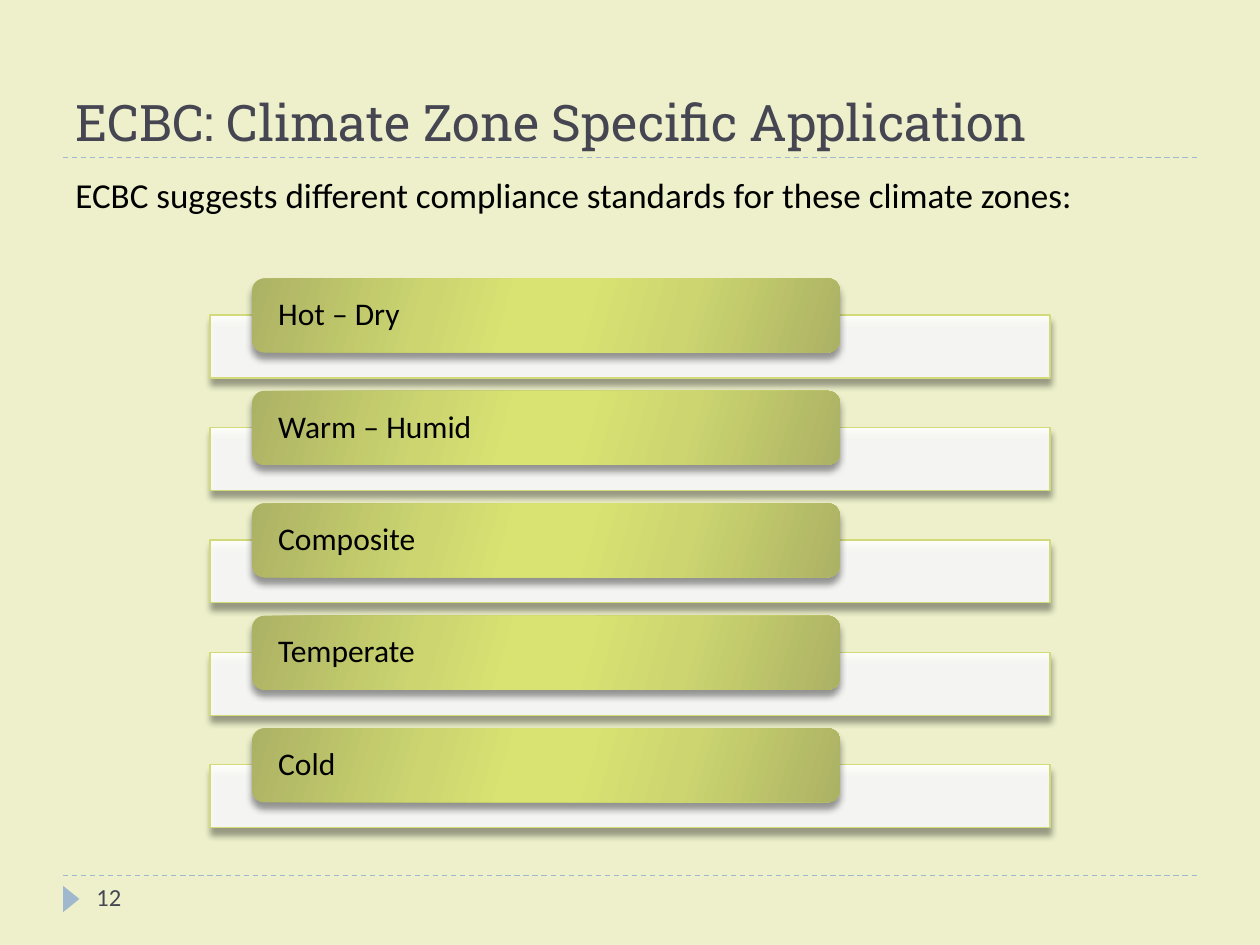
"""Build the climate zone slide: a heading, an introduction and five labelled bars."""
from dataclasses import dataclass

from lxml import etree
from pptx import Presentation
from pptx import util as u
from pptx.dml import color
from pptx.enum import dml, shapes, text
from pptx.oxml import ns

SLIDE_WIDTH, SLIDE_HEIGHT = u.Inches(10), u.Inches(7.5)
COLUMN, ROW = SLIDE_WIDTH / 60, SLIDE_HEIGHT / 60
ZONE_PITCH = 7.14
COLORS = {
    "background": "EDF0CA", "accent": "9FB8CD", "heading": "464653",
    "body": "000000", "bar": "FFFFFF", "bar_edge": "D2DA7A",
    "tab_dark": "ACB264", "tab_mid": "CCD570", "tab_light": "D9E371",
}
TAB_STOPS = [(0, "tab_dark"), (30, "tab_mid"), (45, "tab_light"),
             (55, "tab_light"), (73, "tab_mid"), (100, "tab_dark")]
ZONES = ["Hot – Dry", "Warm – Humid", "Composite", "Temperate", "Cold"]


@dataclass(frozen=True)
class Area:
    """A rectangle in grid columns and rows."""
    column: float
    row: float
    columns: float
    rows: float

    def box(self) -> tuple[int, int, int, int]:
        return (round(self.column * COLUMN), round(self.row * ROW),
                round(self.columns * COLUMN), round(self.rows * ROW))


@dataclass(frozen=True)
class Style:
    """The look of a run of text."""
    font: str
    size: float
    color: str


@dataclass(frozen=True)
class Caption:
    """A line of text with its place and look."""
    wording: str
    area: Area
    style: Style
    anchor: text.MSO_ANCHOR = text.MSO_ANCHOR.TOP


CAPTIONS = [
    Caption("ECBC: Climate Zone Specific Application", Area(3, 1.36, 54, 8.64),
            Style("Roboto Slab", 28.8, "heading"), text.MSO_ANCHOR.BOTTOM),
    Caption("ECBC suggests different compliance standards for these climate zones:",
            Area(3, 10.64, 54.5, 43.2), Style("Calibri", 20, "body")),
    Caption("12", Area(4, 55.6, 13, 3.2), Style("Calibri", 14, "heading")),
]
ZONE_STYLE = Style("Calibri", 18, "body")


def rgb(name: str) -> color.RGBColor:
    return color.RGBColor.from_string(COLORS[name])


def add_child(parent, tag: str, **attributes):
    return etree.SubElement(parent, ns.qn(tag), attributes)


def write(frame, wording: str, style: Style, anchor: text.MSO_ANCHOR):
    frame.word_wrap = True
    frame.vertical_anchor = anchor
    paragraph = frame.paragraphs[0]
    paragraph.alignment = text.PP_ALIGN.LEFT
    run = paragraph.add_run()
    run.text = wording
    run.font.name, run.font.size = style.font, u.Pt(style.size)
    run.font.color.rgb = rgb(style.color)
    return paragraph


def draw_caption(slide, caption: Caption) -> None:
    frame = slide.shapes.add_textbox(*caption.area.box()).text_frame
    write(frame, caption.wording, caption.style, caption.anchor)


def draw_rule(slide, row: float) -> None:
    left, top, width, _ = Area(3, row, 54, 0).box()
    rule = slide.shapes.add_connector(shapes.MSO_CONNECTOR.STRAIGHT,
                                      left, top, left + width, top)
    rule.line.color.rgb = rgb("accent")
    rule.line.width = u.Pt(0.75)
    rule.line.dash_style = dml.MSO_LINE.DASH
    add_child(rule._element.spPr, "a:effectLst")


def draw_shape(slide, kind: shapes.MSO_SHAPE, area: Area, fill: str):
    shape = slide.shapes.add_shape(kind, *area.box())
    shape.shadow.inherit = False
    shape.fill.solid()
    shape.fill.fore_color.rgb = rgb(fill)
    shape.line.fill.background()
    return shape


def cast_shadow(shape) -> None:
    effects = shape._element.spPr.find(ns.qn("a:effectLst"))
    shadow = add_child(effects, "a:outerShdw", blurRad=str(u.Pt(4)),
                       dist=str(u.Pt(3.4)), dir="5400000", rotWithShape="0")
    shade = add_child(shadow, "a:srgbClr", val=COLORS["body"])
    add_child(shade, "a:alpha", val="40000")


def blend(shape) -> None:
    shape.fill.gradient()
    shape.fill.gradient_angle = 344
    stops = shape._element.spPr.find(".//" + ns.qn("a:gsLst"))
    for stop in list(stops):
        stops.remove(stop)
    for percent, name in TAB_STOPS:
        stop = add_child(stops, "a:gs", pos=str(percent * 1000))
        add_child(stop, "a:srgbClr", val=COLORS[name])


def draw_zone(slide, index: int, name: str) -> None:
    offset = index * ZONE_PITCH
    bar = draw_shape(slide, shapes.MSO_SHAPE.RECTANGLE,
                     Area(10, 20 + offset, 40, 4), "bar")
    bar_color = bar._element.spPr.find(ns.qn("a:solidFill"))[0]
    add_child(bar_color, "a:alpha", val="90000")
    bar.line.color.rgb = rgb("bar_edge")
    bar.line.width = u.Pt(0.75)
    cast_shadow(bar)

    tab = draw_shape(slide, shapes.MSO_SHAPE.ROUNDED_RECTANGLE,
                     Area(12, 17.68 + offset, 28, 4.7), "tab_light")
    blend(tab)
    cast_shadow(tab)
    frame = tab.text_frame
    frame.margin_left = frame.margin_right = u.Inches(0.18)
    frame.margin_top = frame.margin_bottom = 0
    label = write(frame, name, ZONE_STYLE, text.MSO_ANCHOR.MIDDLE)
    label.line_spacing = 0.9


def main() -> None:
    deck = Presentation()
    deck.slide_width, deck.slide_height = SLIDE_WIDTH, SLIDE_HEIGHT
    slide = deck.slides.add_slide(deck.slide_layouts[6])
    slide.background.fill.solid()
    slide.background.fill.fore_color.rgb = rgb("background")
    for row in (55.6, 10):
        draw_rule(slide, row)
    marker = draw_shape(slide, shapes.MSO_SHAPE.ISOSCELES_TRIANGLE,
                        Area(2.76, 56.56, 1.26, 1.04), "accent")
    marker.rotation = 90
    for caption in CAPTIONS:
        draw_caption(slide, caption)
    for index, name in enumerate(ZONES):
        draw_zone(slide, index, name)
    deck.save("out.pptx")


if __name__ == "__main__":
    main()
